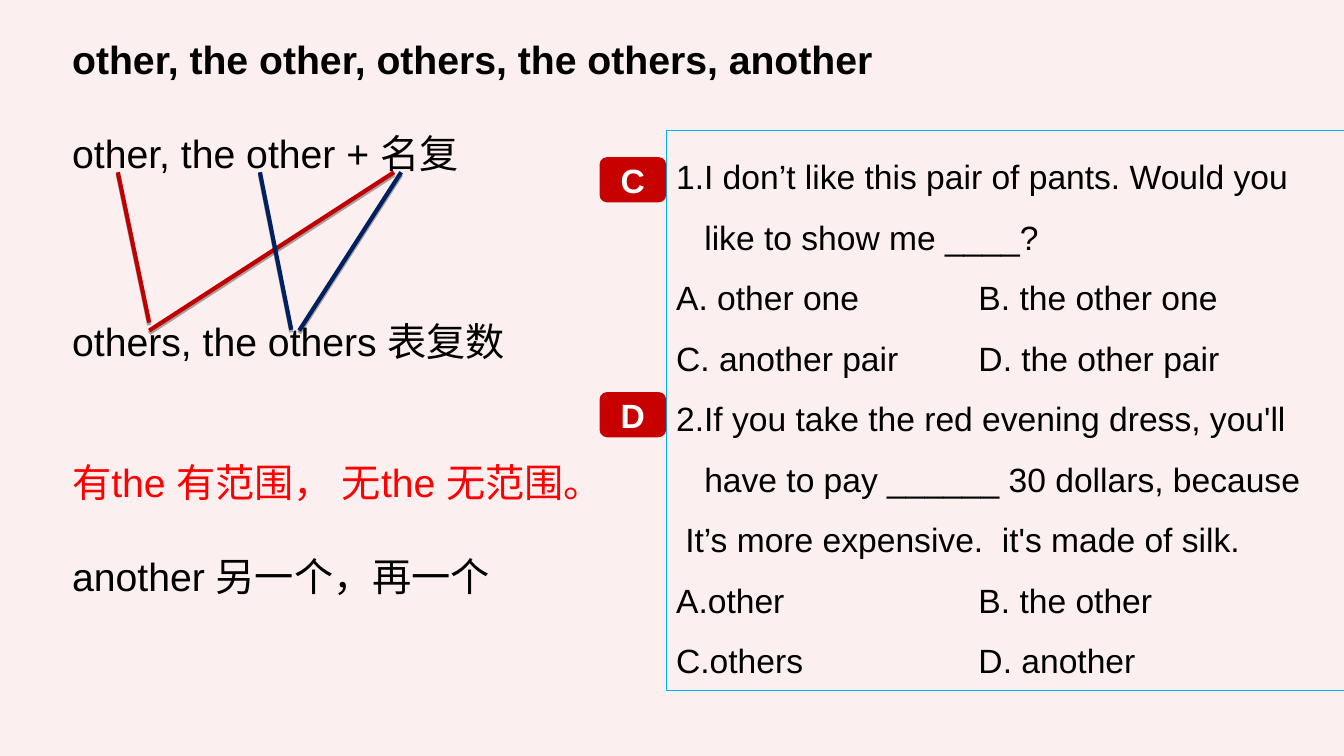
from lxml import etree
from pptx import Presentation
from pptx.dml.color import RGBColor
from pptx.enum.shapes import MSO_CONNECTOR, MSO_SHAPE
from pptx.enum.text import MSO_ANCHOR, PP_ALIGN
from pptx.oxml import parse_xml
from pptx.oxml.ns import nsdecls, qn
from pptx.util import Cm, Pt

LINE = MSO_CONNECTOR.STRAIGHT
RECT, ROUND = MSO_SHAPE.RECTANGLE, MSO_SHAPE.ROUNDED_RECTANGLE
TOP, MID = MSO_ANCHOR.TOP, MSO_ANCHOR.MIDDLE
LEFT, CENTER = PP_ALIGN.LEFT, PP_ALIGN.CENTER

HEX = {"back": "FBF0EF", "black": "000000", "red": "FF0000", "white": "FFFFFF",
       "badge": "C70000", "crimson": "C00000", "navy": "002060", "frame": "00B0F0"}
LATIN, ASIAN = "Arial", "Noto Sans CJK SC"

NOTE_PITCH, QUIZ_PITCH = 33.6, 43.2
NOTES = [
    ("other, the other, others, the others, another", 0, "black", True),
    ("other, the other + 名复", 1, "black", False),
    ("others, the others 表复数", 3, "black", False),
    ("有the 有范围， 无the 无范围。", 2, "red", False),
    ("another 另一个，再一个", 1, "black", False),
]
QUIZ = [
    ("1.I don’t like this pair of pants. Would you", 0),
    ("like to show me ____?", 0.71),
    ("A. other one\tB. the other one", 0),
    ("C. another pair\tD. the other pair", 0),
    ("2.If you take the red evening dress, you'll", 0),
    ("have to pay ______ 30 dollars, because", 0.71),
    ("It’s more expensive.  it's made of silk.", 0.23),
    ("A.other\tB. the other", 0),
    ("C.others\tD. another", 0),
]
LINKS = [
    (2.97, 4.34, 3.76, 8.13, "crimson"),
    (9.93, 4.34, 3.76, 8.33, "crimson"),
    (6.55, 4.34, 7.34, 8.31, "navy"),
    (10.11, 4.34, 7.54, 8.33, "navy"),
]
BADGES = [("C", 3.96), ("D", 9.88)]
SHADE = (f'<a:effectLst {nsdecls("a")}><a:outerShdw blurRad="0" dist="22860" '
         'dir="5400000" rotWithShape="0"><a:srgbClr val="000000">'
         '<a:alpha val="33000"/></a:srgbClr></a:outerShdw></a:effectLst>')


def color(name):
    """Return the named colour."""
    return RGBColor.from_string(HEX[name])


def apply(item, **format):
    """Set each format value on the item."""
    for key, value in format.items():
        setattr(item, key, value)


def write(para, text, size, tone, bold=False, **format):
    """Fill a paragraph with one run of text."""
    apply(para, **format)
    run = para.add_run()
    run.text = text
    apply(run.font, name=LATIN, size=Pt(size), bold=bold)
    run.font.color.rgb = color(tone)
    asian = etree.SubElement(run.font._element, qn("a:ea"))
    asian.set("typeface", ASIAN)


def lines(frame, count):
    """Return the given number of paragraphs of a frame."""
    return [frame.paragraphs[0]] + [frame.add_paragraph() for _ in range(count - 1)]


def add_notes(slide):
    """Add the grammar notes on the left."""
    box = slide.shapes.add_textbox(Cm(1.57), Cm(0.76), Cm(23.22), Cm(14.61))
    frame = box.text_frame
    frame.word_wrap = True
    for para, (text, gap, tone, bold) in zip(lines(frame, len(NOTES)), NOTES):
        write(para, text, 28, tone, bold, line_spacing=Pt(NOTE_PITCH),
              space_before=Pt(gap * NOTE_PITCH))


def add_link(slide, x1, y1, x2, y2, tone):
    """Add a shaded line between two words."""
    link = slide.shapes.add_connector(LINE, Cm(x1), Cm(y1), Cm(x2), Cm(y2))
    link.line.color.rgb = color(tone)
    link.line.width = Pt(3)
    link._element.spPr.append(parse_xml(SHADE))


def add_tab(para, stop):
    """Set one left tab stop on a paragraph."""
    props = para._p.get_or_add_pPr()
    tabs = etree.SubElement(props, qn("a:tabLst"))
    tab = etree.SubElement(tabs, qn("a:tab"))
    tab.set("pos", str(stop))
    tab.set("algn", "l")


def add_quiz(slide):
    """Add the framed questions on the right."""
    box = slide.shapes.add_shape(RECT, Cm(16.79), Cm(3.3), Cm(17.09), Cm(14.1))
    box.shadow.inherit = False
    box.fill.background()
    box.line.color.rgb = color("frame")
    box.line.width = Pt(0.75)
    frame = box.text_frame
    apply(frame, word_wrap=True, vertical_anchor=TOP)
    for para, (text, indent) in zip(lines(frame, len(QUIZ)), QUIZ):
        write(para, text, 24, "black", alignment=LEFT, line_spacing=Pt(QUIZ_PITCH))
        if indent:
            para._p.get_or_add_pPr().set("marL", str(Cm(indent)))
        if "\t" in text:
            add_tab(para, Cm(7.62))


def add_badge(slide, text, top):
    """Add an answer badge beside the frame."""
    badge = slide.shapes.add_shape(ROUND, Cm(15.11), Cm(top), Cm(1.68), Cm(1.14))
    badge.shadow.inherit = False
    badge.fill.solid()
    badge.fill.fore_color.rgb = color("badge")
    badge.line.fill.background()
    frame = badge.text_frame
    frame.vertical_anchor = MID
    write(frame.paragraphs[0], text, 24, "white", True, alignment=CENTER)


def main():
    """Build the slide and save it."""
    deck = Presentation()
    apply(deck, slide_width=Cm(33.87), slide_height=Cm(19.05))
    slide = deck.slides.add_slide(deck.slide_layouts[6])
    slide.background.fill.solid()
    slide.background.fill.fore_color.rgb = color("back")
    add_notes(slide)
    for link in LINKS:
        add_link(slide, *link)
    add_quiz(slide)
    for badge in BADGES:
        add_badge(slide, *badge)
    deck.save("out.pptx")


if __name__ == "__main__":
    main()
